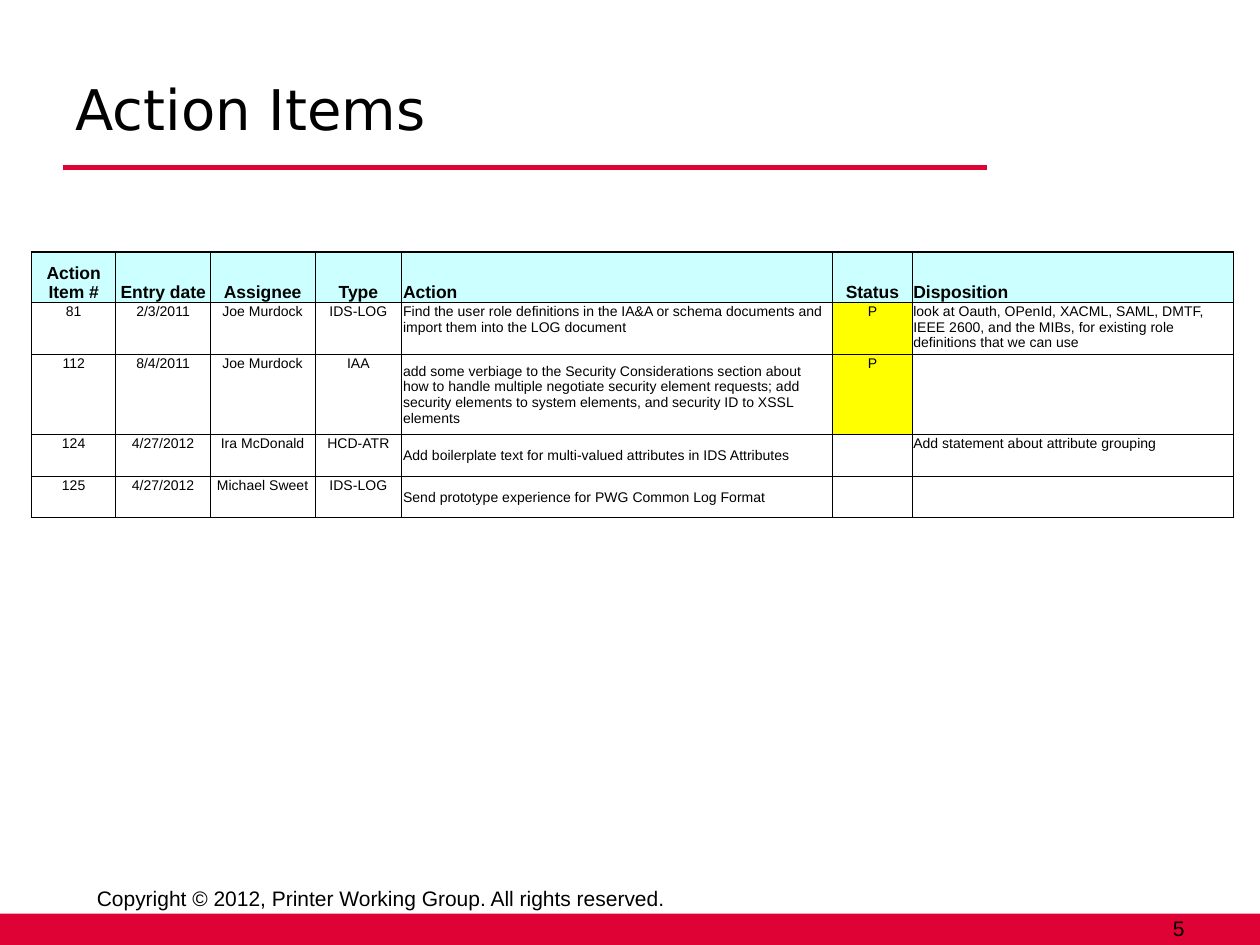
import pptx
import pptx.util
import pptx.dml.color
import pptx.enum.shapes
import pptx.enum.text
from lxml import etree

Inches = pptx.util.Inches
ALIGN = pptx.enum.text.PP_ALIGN
ANCHOR = pptx.enum.text.MSO_ANCHOR
NAMESPACE = "http://schemas.openxmlformats.org/drawingml/2006/main"
RED, BLACK, HEADER, PENDING = "DE0235", "000000", "CCFFFF", "FFFF00"


def color(code):
    return pptx.dml.color.RGBColor.from_string(code)


def write(frame, text, size=12, font="Arial", bold=False, align=ALIGN.LEFT, anchor=ANCHOR.MIDDLE):
    frame.word_wrap = True
    frame.vertical_anchor = anchor
    para = frame.paragraphs[0]
    para.alignment = align
    if text:
        span = para.add_run()
        span.text = text
        span.font.size = pptx.util.Pt(size)
        span.font.name = font
        span.font.bold = bold
        span.font.color.rgb = color(BLACK)


deck = pptx.Presentation()
deck.slide_width, deck.slide_height = Inches(10), Inches(7.5)
page = deck.slides.add_slide(deck.slide_layouts[5])

# Footer band and title rule
band = page.shapes.add_shape(pptx.enum.shapes.MSO_SHAPE.RECTANGLE, 0, Inches(7.25), deck.slide_width, Inches(0.25))
band.shadow.inherit = False
band.fill.solid()
band.fill.fore_color.rgb = color(RED)
band.line.fill.background()

rule = page.shapes.add_connector(
    pptx.enum.shapes.MSO_CONNECTOR.STRAIGHT, Inches(0.5), Inches(1.33), Inches(7.83), Inches(1.33))
rule.line.color.rgb = color(RED)
rule.line.width = pptx.util.Pt(3)
etree.SubElement(rule.element.spPr, f"{{{NAMESPACE}}}effectLst")

# Page number and copyright
for text, left, top, width, align in [
    ("5", 7.17, 7.24, 2.33, ALIGN.RIGHT),
    ("Copyright © 2012, Printer Working Group. All rights reserved.", 0.67, 7, 4.92, ALIGN.LEFT),
]:
    box = page.shapes.add_textbox(Inches(left), Inches(top), Inches(width), Inches(0.25))
    write(box.text_frame, text, align=align)

# Title
title = page.shapes.title
title.left, title.top, title.width, title.height = Inches(0.5), Inches(0.38), Inches(7.25), Inches(0.95)
write(title.text_frame, "Action Items", size=32, font="DejaVu Sans")

# Action item table
rows = [
    ["Action Item #", "Entry date", "Assignee", "Type", "Action", "Status", "Disposition"],
    ["81", "2/3/2011", "Joe Murdock", "IDS-LOG",
     "Find the user role definitions in the IA&A or schema documents and import them into the LOG document", "P",
     "look at Oauth, OPenId, XACML, SAML, DMTF, IEEE 2600, and the MIBs, "
     "for existing role definitions that we can use"],
    ["112", "8/4/2011", "Joe Murdock", "IAA",
     "add some verbiage to the Security Considerations section about how to handle multiple negotiate "
     "security element requests; add security elements to system elements, and security ID to XSSL elements",
     "P", ""],
    ["124", "4/27/2012", "Ira McDonald", "HCD-ATR",
     "Add boilerplate text for multi-valued attributes in IDS Attributes", "",
     "Add statement about attribute grouping"],
    ["125", "4/27/2012", "Michael Sweet", "IDS-LOG",
     "Send prototype experience for PWG Common Log Format", "", ""],
]
widths = [0.67, 0.75, 0.83, 0.69, 3.42, 0.63, 2.55]
heights = [0.4, 0.39, 0.64, 0.33, 0.33]
ACTION, DISPOSITION = 4, 6

table = page.shapes.add_table(
    len(rows), len(widths), Inches(0.25), Inches(2), Inches(sum(widths)), Inches(sum(heights))).table
table.first_row = table.horz_banding = False
for column, width in zip(table.columns, widths):
    column.width = Inches(width)

for r, row in enumerate(rows):
    table.rows[r].height = Inches(heights[r])
    for c, text in enumerate(row):
        cell = table.cell(r, c)
        cell.margin_left = cell.margin_right = cell.margin_top = Inches(0.01)
        cell.margin_bottom = 0
        header = r == 0
        anchor = ANCHOR.BOTTOM if header else ANCHOR.MIDDLE if c == ACTION and r > 1 else ANCHOR.TOP
        write(cell.text_frame, text, size=10 if header else 8, bold=header,
              align=ALIGN.LEFT if c in (ACTION, DISPOSITION) else ALIGN.CENTER)
        cell.vertical_anchor = anchor

        # Heavier borders on the left, right and top edges of the table
        heavy = {"lnL": c == 0, "lnR": c == DISPOSITION, "lnT": header, "lnB": False}
        properties = cell._tc.get_or_add_tcPr()
        for side, is_heavy in heavy.items():
            border = etree.SubElement(properties, f"{{{NAMESPACE}}}{side}", w=str(pptx.util.Pt(1 if is_heavy else 0.5)))
            fill = etree.SubElement(border, f"{{{NAMESPACE}}}solidFill")
            etree.SubElement(fill, f"{{{NAMESPACE}}}srgbClr", val=BLACK)

        shade = HEADER if header else PENDING if text == "P" else None
        if shade:
            cell.fill.solid()
            cell.fill.fore_color.rgb = color(shade)
        else:
            cell.fill.background()

deck.save("out.pptx")
